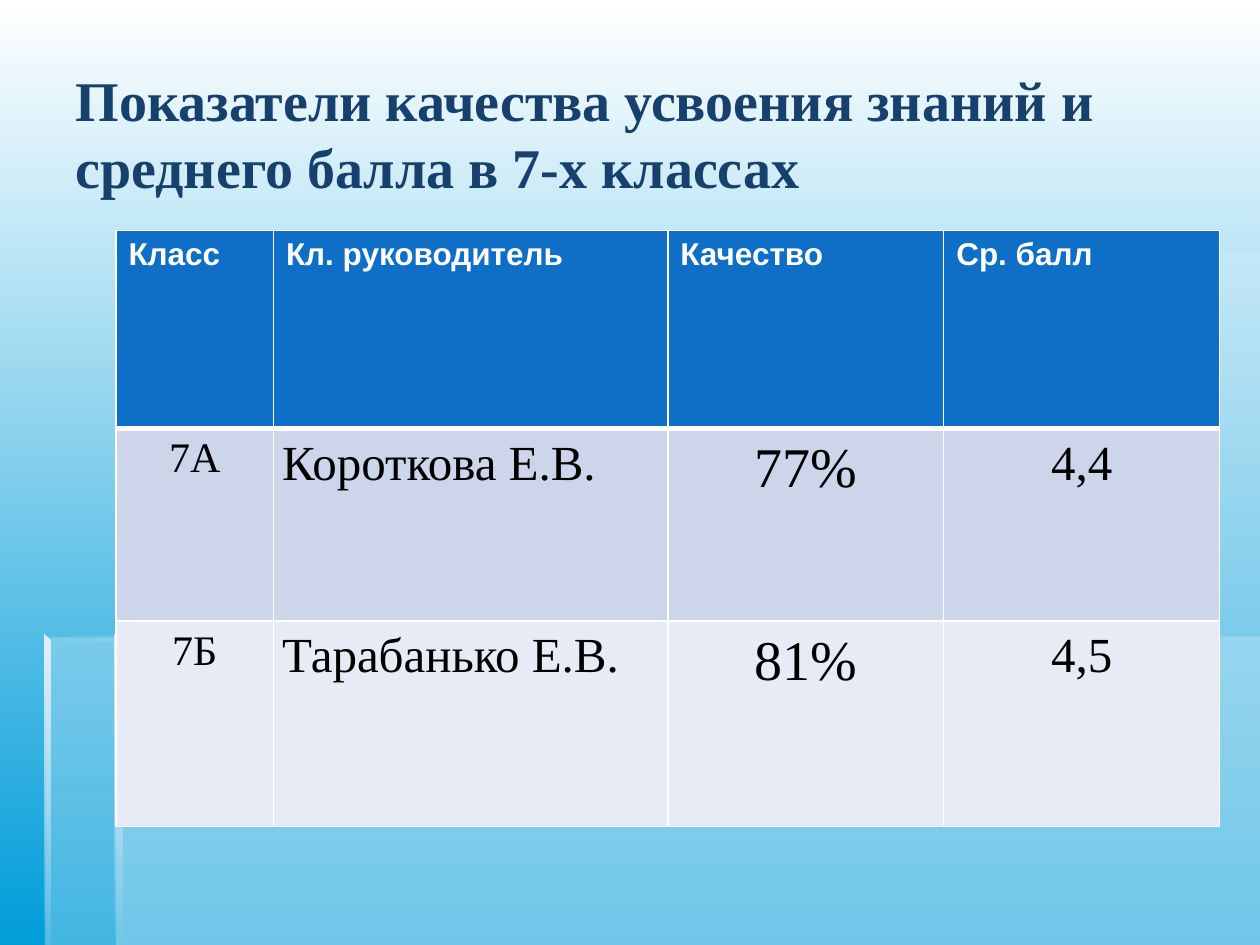
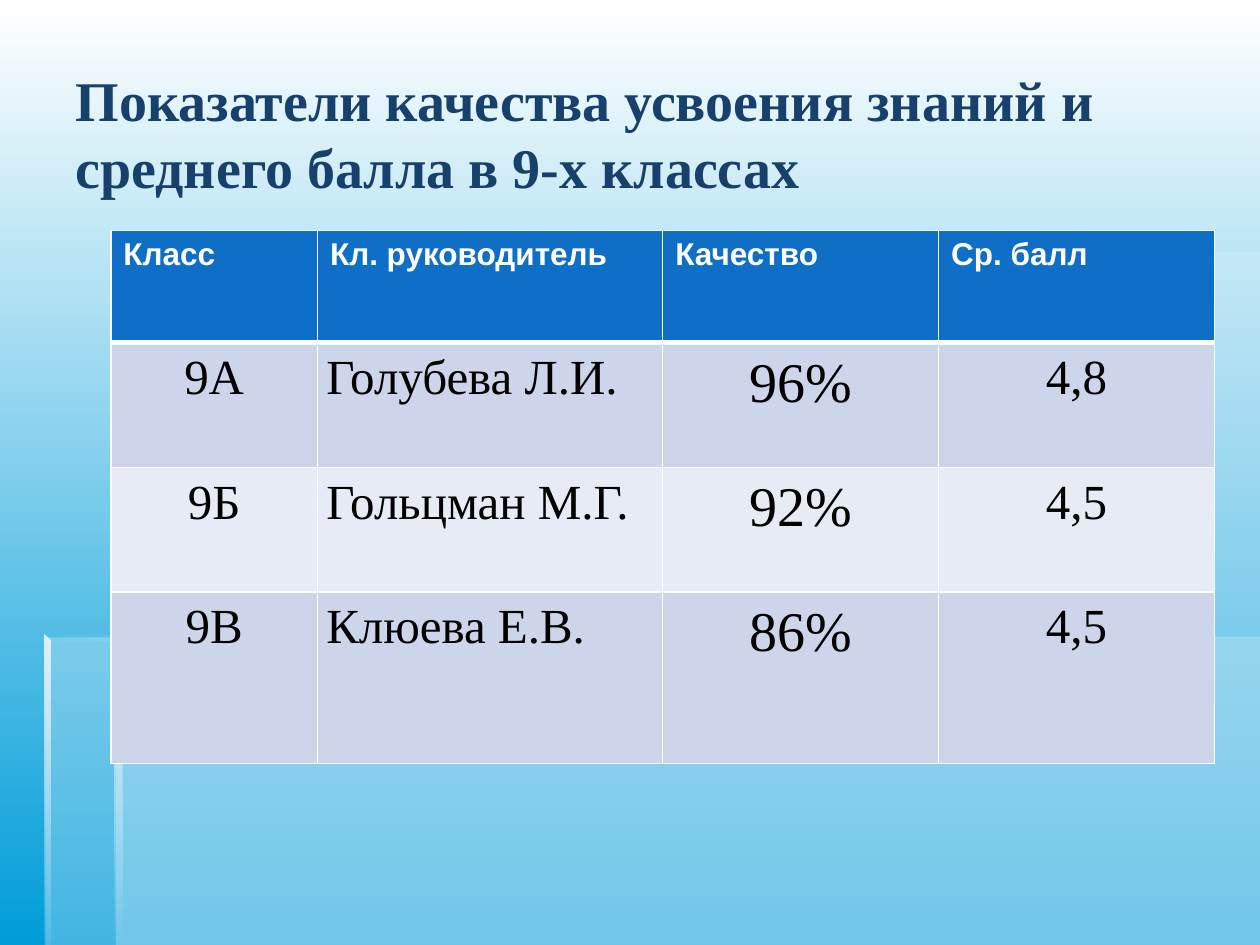
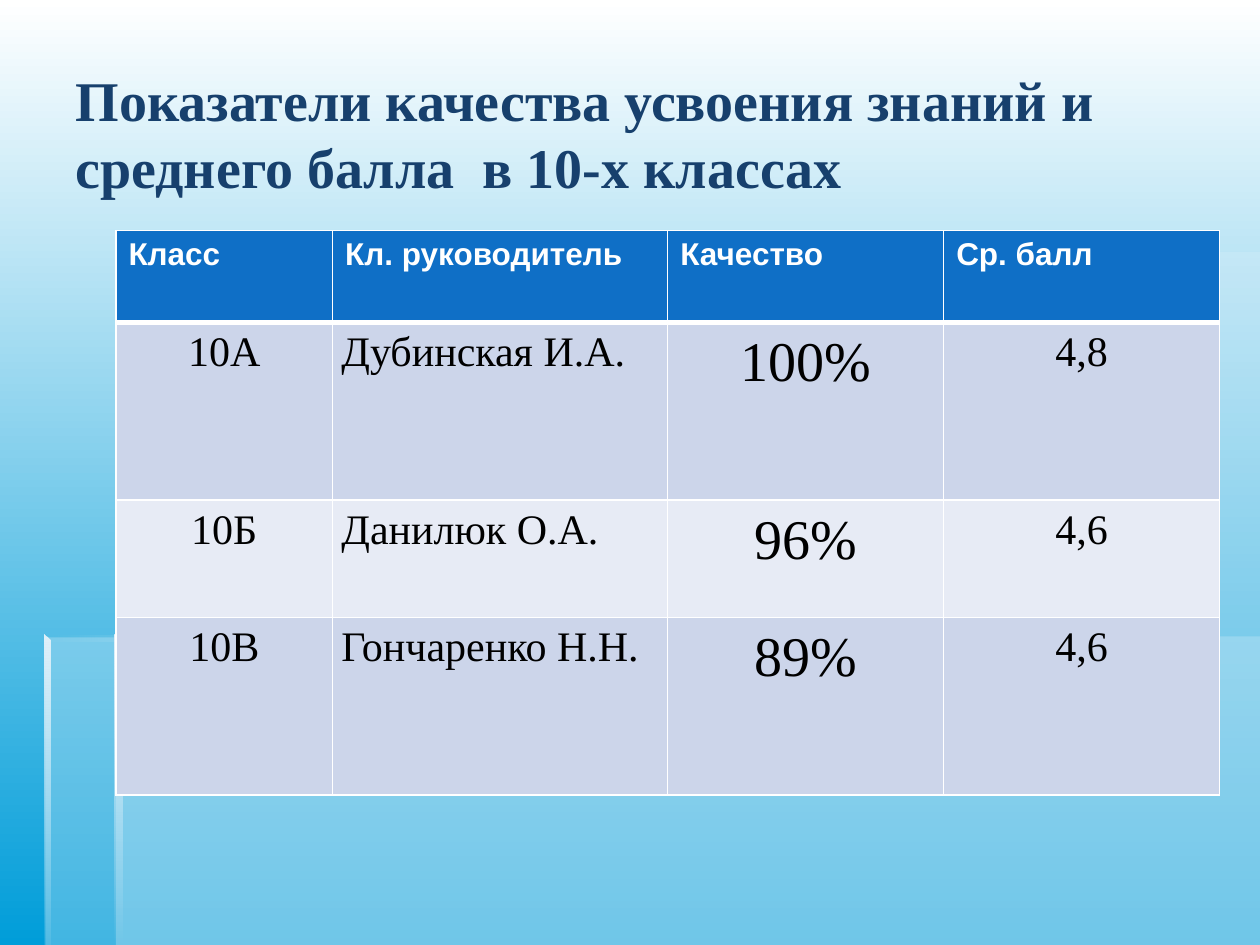
import dataclasses

import lxml.etree
import pptx
import pptx.dml.color
import pptx.enum.text
import pptx.oxml.ns
import pptx.util

Inches = pptx.util.Inches
Pt = pptx.util.Pt
qn = pptx.oxml.ns.qn
ALIGN = pptx.enum.text.PP_ALIGN


@dataclasses.dataclass(frozen=True)
class Theme:
    sky: str = "009DD9"
    white: str = "FFFFFF"
    black: str = "000000"
    title: str = "17406D"
    header: str = "0F6FC6"
    bands: tuple = ("CCD5EA", "E7EBF5")
    glass: str = "DBEFF9"
    shade: str = "C9DBE4"
    shine: str = "E0F1FA"
    serif: str = "Times New Roman"
    sans: str = "Arial"
    title_size: int = 32
    header_size: int = 18
    border: int = 1
    header_border: int = 3


THEME = Theme()
TITLE_BOX = (0.5, 0.27, 9.17, 1.57)
HEADERS = ("Класс", "Кл. руководитель", "Качество", "Ср. балл")
ALIGNMENTS = (ALIGN.CENTER, ALIGN.LEFT, ALIGN.CENTER, ALIGN.CENTER)

# Glass panels: outline, stops of (colour, opacity %), gradient angle
ACROSS = ((THEME.glass, 0), (THEME.shade, 100))
PANE = ((THEME.glass, 30),)
PANELS = (
    (((0.92, 5.05), (0.92, 7.5), (10, 7.5), (10, 5.05)), PANE, 0),
    (((0.94, 5.06), (0.36, 5.06), (0.36, 7.5), (10, 7.5), (10, 2), (0.94, 2)), PANE, 0),
    (((0.92, 2), (0.92, 2.05), (8.91, 2.05), (8.91, 2)), ACROSS, 0),
    (((0.92, 2), (0.92, 5.1), (0.97, 5.1), (0.96, 2.04)),
     ((THEME.shine, 100), (THEME.glass, 100)), 270),
    (((0.91, 7.5), (0.97, 7.5), (0.96, 5.08), (0.91, 5.04)),
     ((THEME.shine, 100), (THEME.glass, 0)), 270),
    (((0.35, 5.04), (0.35, 5.09), (5.35, 5.09), (5.35, 5.04)), ACROSS, 0),
    (((0.35, 5.04), (0.35, 7.5), (0.4, 7.5), (0.4, 5.09)),
     ((THEME.shine, 100), (THEME.glass, 10)), 270),
)

# One entry per slide; sizes follow the columns
REPORTS = (
    dict(title="Показатели качества усвоения знаний и среднего балла в 7-х классах",
         corner=(0.92, 1.83), widths=(1.25, 3.13, 2.19, 2.19),
         heights=(1.57, 1.53, 1.63), sizes=(24, 28, 32, 28),
         records=(("7А", "Короткова Е.В.", "77%", "4,4"),
                  ("7Б", "Тарабанько Е.В.", "81%", "4,5"))),
    dict(title="Показатели качества усвоения знаний и среднего балла в 9-х классах",
         corner=(0.88, 1.83), widths=(1.64, 2.74, 2.19, 2.19),
         heights=(0.89, 0.99, 0.99, 1.36), sizes=(28, 28, 32, 28),
         records=(("9А", "Голубева Л.И.", "96%", "4,8"),
                  ("9Б", "Гольцман М.Г.", "92%", "4,5"),
                  ("9В", "Клюева Е.В.", "86%", "4,5"))),
    dict(title="Показатели качества усвоения знаний и среднего балла  в 10-х классах",
         corner=(0.92, 1.83), widths=(1.72, 2.66, 2.19, 2.19),
         heights=(0.73, 1.41, 0.93, 1.41), sizes=(24, 24, 32, 24),
         records=(("10А", "Дубинская И.А.", "100%", "4,8"),
                  ("10Б", "Данилюк О.А.", "96%", "4,6"),
                  ("10В", "Гончаренко Н.Н.", "89%", "4,6"))),
)


def rgb(colour):
    return pptx.dml.color.RGBColor.from_string(colour)


def set_font(paragraph, name, size, colour, bold=False):
    font = paragraph.font
    font.name, font.size, font.bold = name, Pt(size), bold
    font.color.rgb = rgb(colour)


def fill_gradient(fill, colours, angle):
    fill.gradient()
    fill.gradient_angle = angle
    for position, (stop, colour) in enumerate(zip(fill.gradient_stops, colours)):
        stop.position = position
        stop.color.rgb = rgb(colour)


# Shared backdrop
def add_panel(slide, outline, stops, angle):
    points = [(Inches(x), Inches(y)) for x, y in outline]
    builder = slide.shapes.build_freeform(*points[0], scale=1.0)
    builder.add_line_segments(points[1:], close=True)
    shape = builder.convert_to_shape()
    shape.shadow.inherit = False
    shape.line.fill.background()
    if len(stops) == 1:
        shape.fill.solid()
        shape.fill.fore_color.rgb = rgb(stops[0][0])
    else:
        fill_gradient(shape.fill, [colour for colour, _ in stops], angle)
    for element, (_, opacity) in zip(shape.element.iter(qn("a:srgbClr")), stops):
        if opacity < 100:
            alpha = lxml.etree.SubElement(element, qn("a:alpha"))
            alpha.set("val", str(opacity * 1000))
    return shape


def move_backdrop_to_master(slide, master):
    fill_gradient(master.background.fill, (THEME.white, THEME.sky), 270)
    front = master.shapes[0].element
    for panel in PANELS:
        front.addprevious(add_panel(slide, *panel).element)


# Title
def place_title(slide, text, box):
    title = slide.shapes.title
    title.left, title.top, title.width, title.height = map(Inches, box)
    frame = title.text_frame
    frame.text = text
    frame.word_wrap = True
    frame.auto_size = pptx.enum.text.MSO_AUTO_SIZE.NONE
    frame.vertical_anchor = pptx.enum.text.MSO_ANCHOR.MIDDLE
    paragraph = frame.paragraphs[0]
    paragraph.alignment = ALIGN.LEFT
    set_font(paragraph, THEME.serif, THEME.title_size, THEME.title, bold=True)


# Table
def set_borders(cell, top, bottom):
    properties = cell._tc.get_or_add_tcPr()
    widths = (("L", THEME.border), ("R", THEME.border), ("T", top), ("B", bottom))
    for index, (side, width) in enumerate(widths):
        line = lxml.etree.Element(qn(f"a:ln{side}"), w=str(Pt(width)))
        solid = lxml.etree.SubElement(line, qn("a:solidFill"))
        lxml.etree.SubElement(solid, qn("a:srgbClr"), val=THEME.white)
        properties.insert(index, line)


def fill_cell(cell, text, colour):
    cell.text = text
    cell.fill.solid()
    cell.fill.fore_color.rgb = rgb(colour)
    return cell.text_frame.paragraphs[0]


def format_header(cell, text):
    paragraph = fill_cell(cell, text, THEME.header)
    set_font(paragraph, THEME.sans, THEME.header_size, THEME.white, bold=True)
    set_borders(cell, THEME.border, THEME.header_border)


def format_value(cell, text, row, size, alignment):
    paragraph = fill_cell(cell, text, THEME.bands[(row - 1) % 2])
    paragraph.alignment = alignment
    paragraph.line_spacing = 1.15
    set_font(paragraph, THEME.serif, size, THEME.black)
    cell.margin_left = cell.margin_right = Inches(0.07)
    cell.margin_top = cell.margin_bottom = 0
    set_borders(cell, THEME.header_border if row == 1 else THEME.border, THEME.border)


def add_marks_table(slide, corner, widths, heights, sizes, records):
    box = (*corner, sum(widths), sum(heights))
    table = slide.shapes.add_table(len(heights), len(widths), *map(Inches, box)).table
    for column, width in zip(table.columns, widths):
        column.width = Inches(width)
    for row, height in zip(table.rows, heights):
        row.height = Inches(height)
    for column, text in enumerate(HEADERS):
        format_header(table.cell(0, column), text)
    for row, record in enumerate(records, start=1):
        for column, text in enumerate(record):
            format_value(table.cell(row, column), text, row,
                         sizes[column], ALIGNMENTS[column])


def add_report_slide(presentation, title, **marks):
    slide = presentation.slides.add_slide(presentation.slide_layouts[5])
    place_title(slide, title, TITLE_BOX)
    add_marks_table(slide, **marks)
    return slide


def main():
    presentation = pptx.Presentation()
    presentation.slide_width, presentation.slide_height = Inches(10), Inches(7.5)
    slides = [add_report_slide(presentation, **report) for report in REPORTS]
    move_backdrop_to_master(slides[0], presentation.slide_master)
    presentation.save("out.pptx")


if __name__ == "__main__":
    main()
